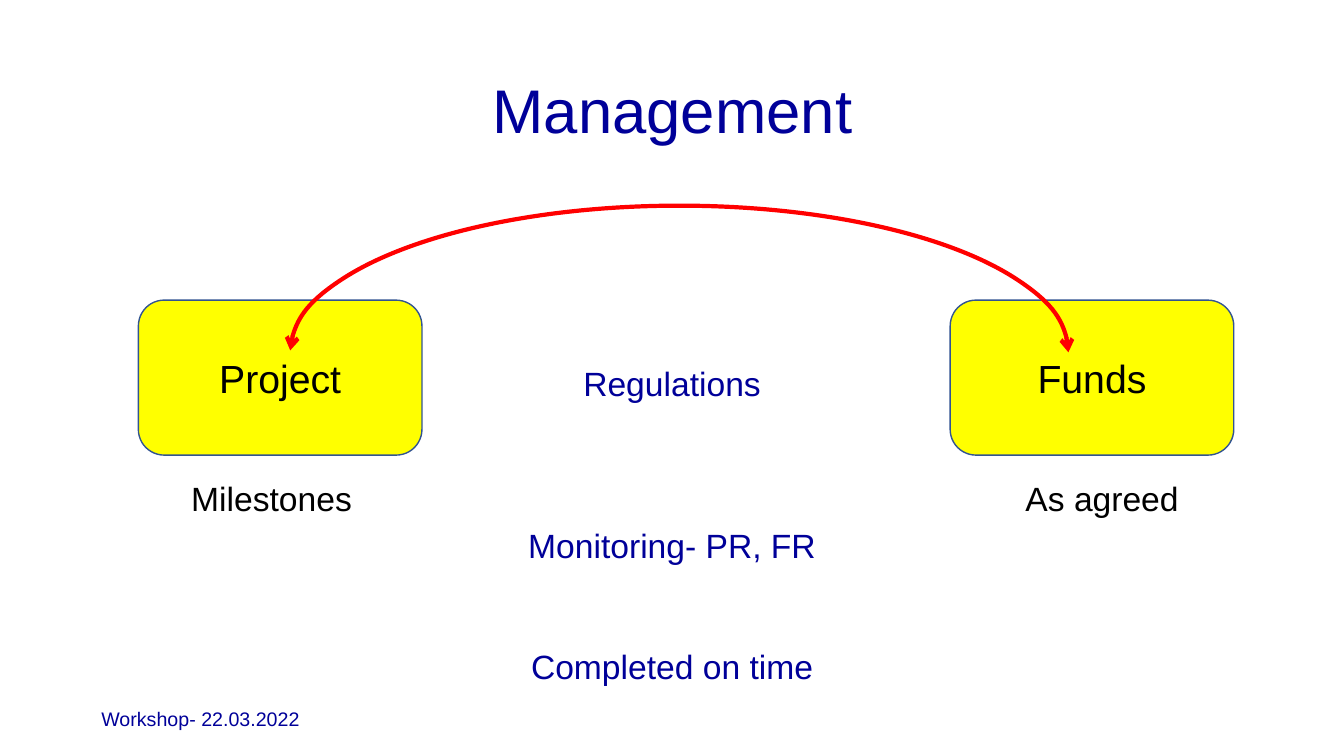
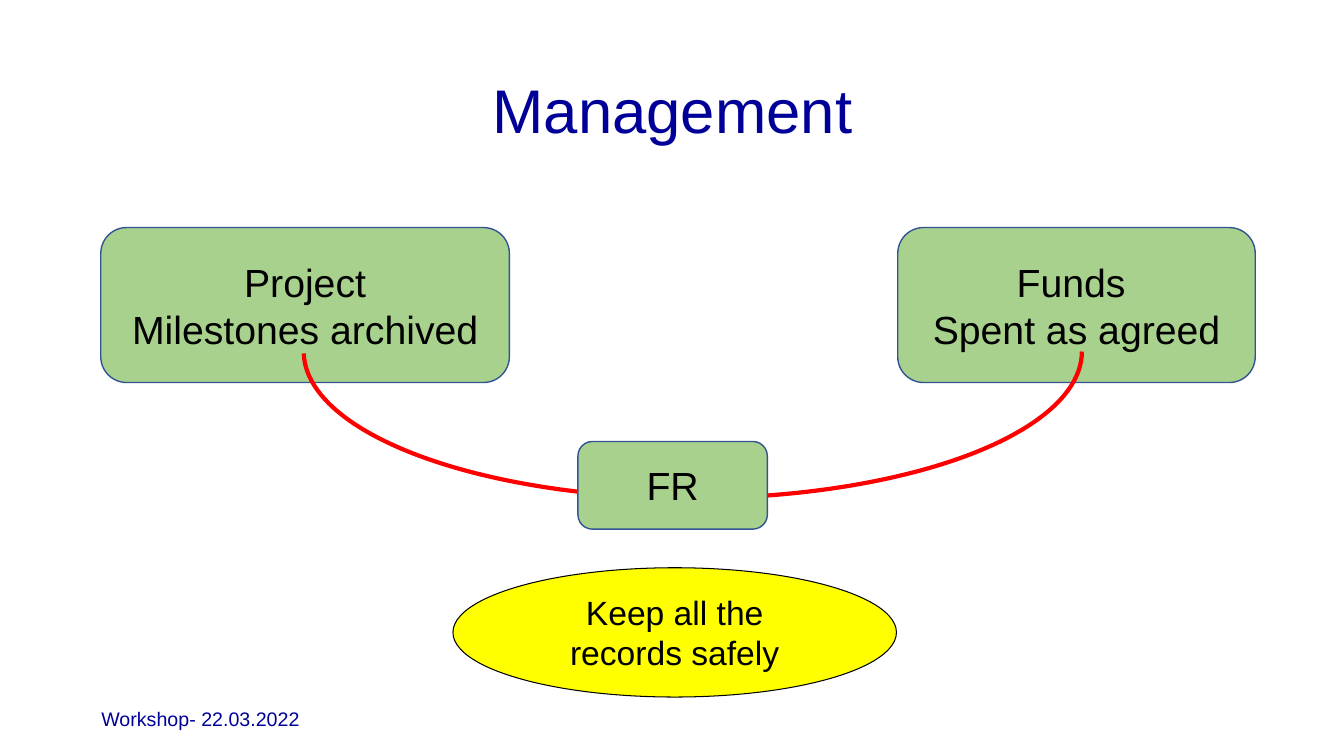
"""Build two slides on managing a project and its funds."""
from pptx import Presentation
from pptx.dml.color import RGBColor
from pptx.enum.shapes import MSO_SHAPE as SHAPE
from pptx.enum.text import MSO_ANCHOR as ANCHOR, PP_ALIGN as ALIGN
from pptx.oxml.ns import qn
from pptx.util import Inches, Pt
from lxml.etree import SubElement

NAVY = RGBColor(0x00, 0x00, 0x99)
BLACK = RGBColor(0x00, 0x00, 0x00)
RED = RGBColor(0xFF, 0x00, 0x00)
YELLOW = RGBColor(0xFF, 0xFF, 0x00)
GREEN = RGBColor(0xA9, 0xD1, 0x8E)
STEEL = RGBColor(0x32, 0x54, 0x91)

deck = Presentation()
deck.slide_width, deck.slide_height = Inches(13.33), Inches(7.5)
COLUMN, ROW = deck.slide_width / 100, deck.slide_height / 100
BOX_HEIGHT, LABEL_HEIGHT = 20.5, 6.7
ARC_WIDTH, ARC_HEIGHT = 57.9, 38.8


def add_text(slide, area, lines, size, color, align=ALIGN.CENTER, outline=None):
    left, top, width, height = area
    place = [int(left * COLUMN), int(top * ROW), int(width * COLUMN), int(height * ROW)]
    if outline is None:
        holder = slide.shapes.add_textbox(*place)
    else:
        holder = slide.shapes.add_shape(outline, *place)
        holder.shadow.inherit = False
    frame = holder.text_frame
    frame.word_wrap = True
    frame.vertical_anchor = ANCHOR.MIDDLE
    frame.text = lines
    for paragraph in frame.paragraphs:
        paragraph.alignment = align
        paragraph.font.name = "Arial"
        paragraph.font.size = Pt(size)
        paragraph.font.color.rgb = color
    return holder


def add_figure(slide, outline, area, fill, line, weight, lines="", size=28):
    figure = add_text(slide, area, lines, size, BLACK, outline=outline)
    if fill is None:
        figure.fill.background()
    else:
        figure.fill.solid()
        figure.fill.fore_color.rgb = fill
    figure.line.color.rgb = line
    figure.line.width = Pt(weight)
    return figure


slides = [deck.slides.add_slide(deck.slide_layouts[6]) for _ in range(2)]
for slide in slides:
    add_text(slide, (6.8, 92.4, 22.5, 5.3), "Workshop- 22.03.2022", 14, NAVY, ALIGN.LEFT)
    title = add_text(slide, (6.9, 5.3, 86.3, 19.3), "Management", 44, NAVY)
    title.text_frame.paragraphs[0].line_spacing = 0.9

plan, closure = slides

for box_left, name, label_left, label in [
    (10.3, "Project", 13.4, "Milestones"),
    (70.7, "Funds", 75.2, "As agreed"),
]:
    add_figure(plan, SHAPE.ROUNDED_RECTANGLE, (box_left, 39.7, 21.1, BOX_HEIGHT),
               YELLOW, STEEL, 1, name)
    add_text(plan, (label_left, 62.5, 13.6, LABEL_HEIGHT), label, 24, BLACK)

exchange = add_figure(plan, SHAPE.ARC, (21.6, 27.2, ARC_WIDTH, ARC_HEIGHT), None, RED, 3)
exchange.adjustments[0], exchange.adjustments[1] = 108.17, 0
stroke = exchange.element.spPr.find(qn("a:ln"))
for end in ("a:headEnd", "a:tailEnd"):
    SubElement(stroke, qn(end), type="arrow")

for top, step in [(47.3, "Regulations"), (68.7, "Monitoring- PR, FR"), (84.7, "Completed on time")]:
    add_text(plan, (25, top, 50, LABEL_HEIGHT), step, 24, NAVY)

for left, width, result in [
    (7.5, 30.4, "Project\nMilestones archived"),
    (66.8, 26.6, "Funds \nSpent as agreed"),
]:
    add_figure(closure, SHAPE.ROUNDED_RECTANGLE, (left, 30.1, width, BOX_HEIGHT),
               GREEN, STEEL, 1, result)

add_figure(closure, SHAPE.OVAL, (33.7, 75.1, 33, 17.1), YELLOW, BLACK, 0.75,
           "Keep all the records safely", 24)
link = add_figure(closure, SHAPE.ARC, (22.6, 27.1, ARC_WIDTH, ARC_HEIGHT), None, RED, 3)
link.adjustments[0], link.adjustments[1] = 0, 107.83
add_figure(closure, SHAPE.ROUNDED_RECTANGLE, (43, 58.4, 14.1, 11.6), GREEN, STEEL, 1, "FR")

deck.save("out.pptx")
